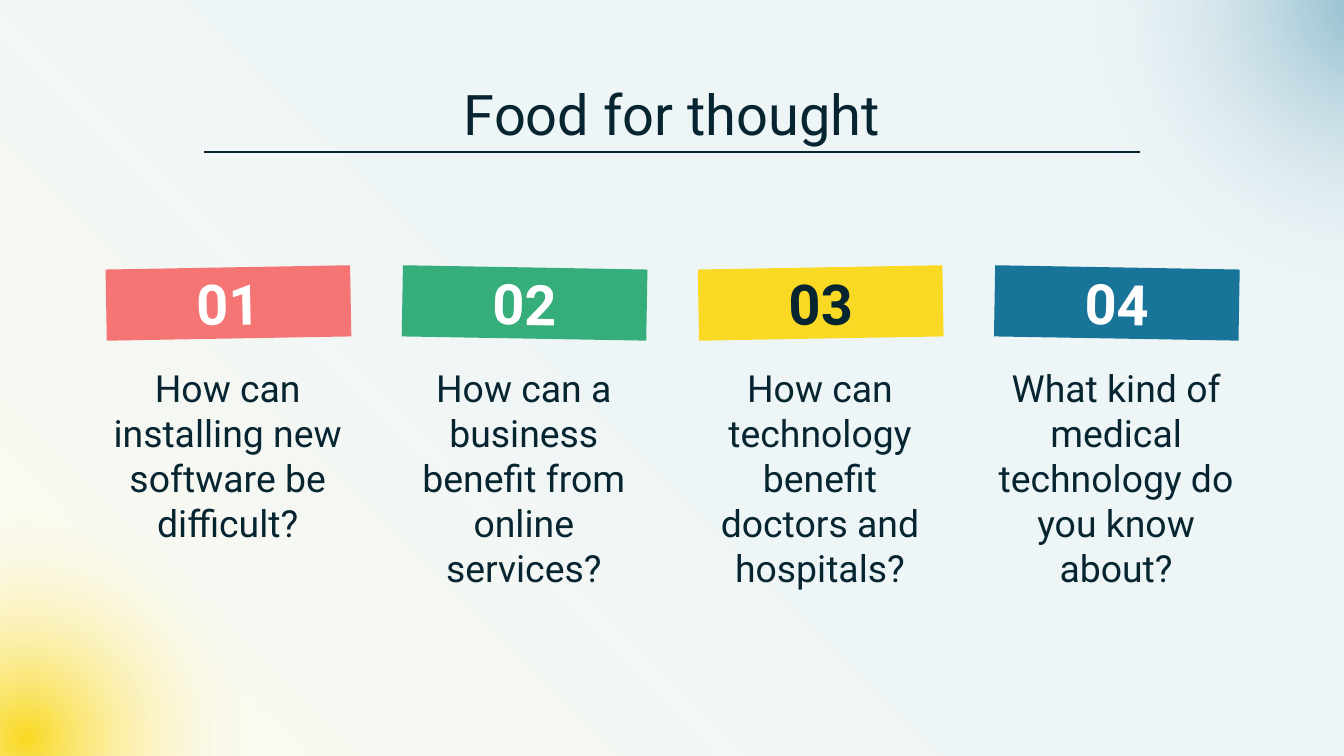
from lxml import etree
from pptx import Presentation
from pptx.dml.color import RGBColor
from pptx.enum.shapes import MSO_CONNECTOR, MSO_SHAPE
from pptx.enum.text import MSO_ANCHOR, MSO_AUTO_SIZE, PP_ALIGN
from pptx.oxml.ns import qn
from pptx.util import Inches, Pt

RECTANGLE, OVAL = MSO_SHAPE.RECTANGLE, MSO_SHAPE.OVAL
STRAIGHT = MSO_CONNECTOR.STRAIGHT
TOP, MIDDLE = MSO_ANCHOR.TOP, MSO_ANCHOR.MIDDLE
CENTER = PP_ALIGN.CENTER
NO_AUTOFIT = MSO_AUTO_SIZE.NONE

WIDTH, HEIGHT = 10, 10 * 9 / 16
COMPARISON_LAYOUT = 4  # a title and four body placeholders
FONT = "Roboto"
INK, WHITE, YELLOW, BLUE = "062531", "FFFFFF", "F9D923", "187498"

MARGIN = 0.08 * WIDTH
COLUMN_WIDTH = 1.79
QUESTIONS = [
    ("01", "F57474", WHITE, "How can installing new software be difficult?"),
    ("02", "36AE7C", WHITE, "How can a business benefit from online services?"),
    ("03", YELLOW, INK, "How can technology benefit doctors and hospitals?"),
    ("04", BLUE, WHITE, "What kind of medical technology do you know about?"),
]


def color(value):
    return RGBColor.from_string(value)


def place(shape, left, top, width, height):
    shape.left, shape.top = Inches(left), Inches(top)
    shape.width, shape.height = Inches(width), Inches(height)


def write(shape, text, size, ink=INK, bold=False, anchor=TOP):
    """Put one centred, unbulleted paragraph in a shape."""
    frame = shape.text_frame
    frame.word_wrap = True
    frame.auto_size = NO_AUTOFIT
    frame.vertical_anchor = anchor
    frame.margin_left = frame.margin_right = 0
    frame.margin_top = frame.margin_bottom = 0
    paragraph = frame.paragraphs[0]
    properties = paragraph._p.get_or_add_pPr()
    properties.set("marL", "0")
    properties.set("indent", "0")
    etree.SubElement(properties, qn("a:buNone"))
    paragraph.alignment = CENTER
    paragraph.space_before = Pt(0)
    run = paragraph.add_run()
    run.text = text
    run.font.name, run.font.size, run.font.bold = FONT, Pt(size), bold
    run.font.color.rgb = color(ink)


def add_plain_shape(slide, kind, box):
    shape = slide.shapes.add_shape(kind, *(Inches(length) for length in box))
    shape.shadow.inherit = False
    shape.line.fill.background()
    return shape


def fill_gradient(shape, stops, angle=None):
    """Fill with (position, colour, opacity) stops; radial without an angle."""
    gradient = etree.Element(qn("a:gradFill"), rotWithShape="1")
    stop_list = etree.SubElement(gradient, qn("a:gsLst"))
    for position, value, opacity in stops:
        stop = etree.SubElement(stop_list, qn("a:gs"), pos=str(position * 1000))
        tint = etree.SubElement(stop, qn("a:srgbClr"), val=value)
        etree.SubElement(tint, qn("a:alpha"), val=str(opacity * 1000))
    if angle is None:
        radial = etree.SubElement(gradient, qn("a:path"), path="circle")
        center = {side: "50000" for side in "ltrb"}
        etree.SubElement(radial, qn("a:fillToRect"), **center)
    else:
        etree.SubElement(gradient, qn("a:lin"), ang=str(angle * 60000), scaled="0")
    shape._element.spPr.find(qn("a:prstGeom")).addnext(gradient)


def add_backdrop(slide, bleed):
    """Pale diagonal wash with a glow in two corners, behind everything."""
    wash = add_plain_shape(
        slide, RECTANGLE, (-bleed, -bleed, WIDTH + 2 * bleed, HEIGHT + 2 * bleed))
    fill_gradient(wash, [(0, BLUE, 7), (50, BLUE, 7), (100, YELLOW, 7)], 135)
    layers = [wash]
    for left, top, diameter, tint, opacity in [
        (-2.39, 2.91, 5.15, YELLOW, 100),
        (6.76, -3.48, 6.96, BLUE, 47),
    ]:
        glow = add_plain_shape(slide, OVAL, (left, top, diameter, diameter))
        fill_gradient(glow, [(0, tint, opacity), (50, WHITE, 0), (100, WHITE, 0)])
        layers.append(glow)
    for position, layer in enumerate(layers, start=2):
        slide.shapes._spTree.insert(position, layer._element)


def add_heading(slide, left, top, width, height):
    title = slide.shapes.title
    place(title, left, top, width, height)
    write(title, "Food for thought", 30)
    # Rule under the title
    inset, rule_y = 0.72, Inches(top + height + 0.03)
    rule = slide.shapes.add_connector(
        STRAIGHT, Inches(left + inset), rule_y, Inches(left + width - inset), rule_y)
    rule.line.color.rgb = color(INK)
    rule.line.width = Pt(0.75)
    etree.SubElement(rule._element.spPr, qn("a:effectLst"))


def add_question(slide, body, question, tilt, left, top, width):
    number, banner_color, number_color, text = question
    # Tilted banner, slightly wider than the column
    banner = add_plain_shape(
        slide, RECTANGLE, (left - 0.01, top, width + 0.03, 0.53))
    banner.fill.solid()
    banner.fill.fore_color.rgb = color(banner_color)
    banner.rotation = tilt
    write(banner, number, 30, number_color, True, MIDDLE)
    # Question
    place(body, left, top + 0.73, width, 0.67)
    write(body, text, 20)


def add_questions(slide, left, top, width):
    bodies = [shape for shape in slide.placeholders
              if shape.placeholder_format.idx > 0]
    step = (width - COLUMN_WIDTH) / (len(QUESTIONS) - 1)
    for column, (body, question) in enumerate(zip(bodies, QUESTIONS)):
        tilt = 1 if column % 2 else -1
        add_question(slide, body, question, tilt,
                     left + column * step, top, COLUMN_WIDTH)


def main():
    presentation = Presentation()
    presentation.slide_width = Inches(WIDTH)
    presentation.slide_height = Inches(HEIGHT)
    slide = presentation.slides.add_slide(
        presentation.slide_layouts[COMPARISON_LAYOUT])
    add_backdrop(slide, 0.04)
    add_heading(slide, MARGIN, 0.59, WIDTH - 2 * MARGIN, 0.51)
    add_questions(slide, MARGIN, 1.99, WIDTH - 2 * MARGIN)
    presentation.save("out.pptx")


if __name__ == "__main__":
    main()
